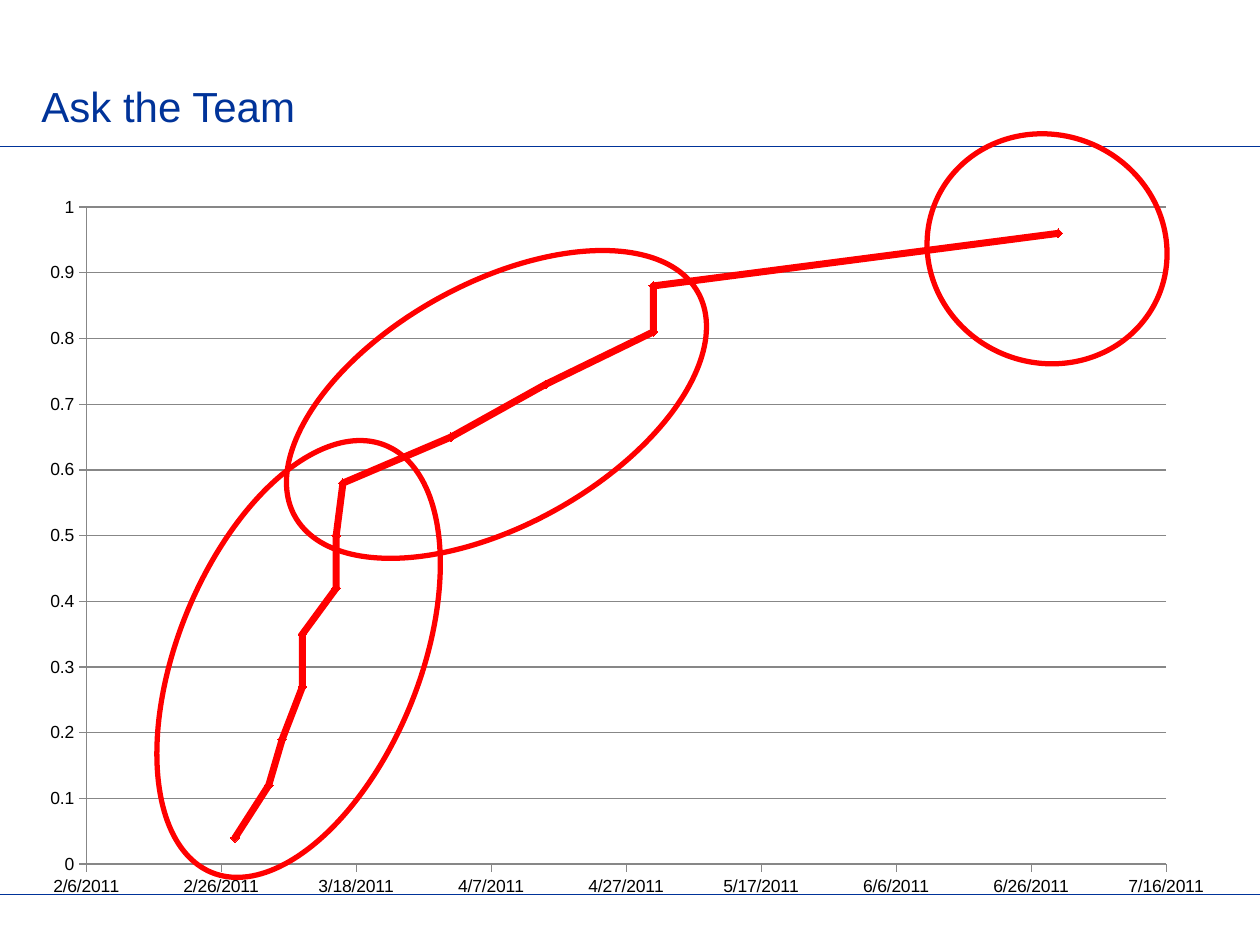
from dataclasses import dataclass

import pptx
import pptx.chart.data
import pptx.dml.color
import pptx.enum.chart
import pptx.enum.shapes
import pptx.enum.text
import pptx.oxml.ns
import pptx.oxml.xmlchemy
import pptx.util
from pptx.util import Inches

RGB = pptx.dml.color.RGBColor


@dataclass(frozen=True)
class Theme:
    font: str = "Arial"
    navy: RGB = RGB(0x00, 0x33, 0x99)
    red: RGB = RGB(0xFF, 0x00, 0x00)
    grey: RGB = RGB(0x87, 0x87, 0x87)
    black: RGB = RGB(0x00, 0x00, 0x00)
    title_size: pptx.util.Length = pptx.util.Pt(24)
    axis_size: pptx.util.Length = pptx.util.Pt(10)


THEME = Theme()

# Dates are spreadsheet day numbers; shares are cumulative.
START_DAY, END_DAY, DAY_STEP = 40580, 40740, 20
ANSWERS = [
    (40602, 0.04), (40607, 0.12), (40609, 0.19), (40612, 0.27),
    (40612, 0.35), (40617, 0.42), (40617, 0.5), (40618, 0.58),
    (40634, 0.65), (40648, 0.73), (40664, 0.81), (40664, 0.88),
    (40724, 0.96),
]
# left, top, width, height, rotation
CLUSTERS = [
    (1.41, 3.4, 1.92, 3.66, 22.1),
    (2.98, 1.38, 1.92, 3.66, 61),
    (7.35, 1.07, 1.92, 1.81, 22.1),
]


def style_line(line, color, points):
    line.color.rgb = color
    line.width = pptx.util.Pt(points)


def add_rule(slide, left, top, width):
    rule = slide.shapes.add_connector(
        pptx.enum.shapes.MSO_CONNECTOR.STRAIGHT, left, top, left + width, top)
    style_line(rule.line, THEME.navy, 0.5)
    properties = rule._element.spPr
    properties.append(pptx.oxml.xmlchemy.OxmlElement("a:effectLst"))


def add_title(slide, left, top, width, height, wording):
    frame = slide.shapes.add_textbox(left, top, width, height).text_frame
    frame.word_wrap = True
    frame.vertical_anchor = pptx.enum.text.MSO_ANCHOR.BOTTOM
    title = frame.paragraphs[0]
    title.text = wording
    title.font.name = THEME.font
    title.font.size = THEME.title_size
    title.font.color.rgb = THEME.navy


def set_plot_layout(chart, x, y, w, h):
    """Fix the inner plot area, in fractions of the chart."""
    plot_area = chart._chartSpace.chart.plotArea
    for old in plot_area.findall(pptx.oxml.ns.qn("c:layout")):
        plot_area.remove(old)
    layout = pptx.oxml.xmlchemy.OxmlElement("c:layout")
    manual = pptx.oxml.xmlchemy.OxmlElement("c:manualLayout")
    layout.append(manual)
    settings = [("layoutTarget", "inner"), ("xMode", "edge"), ("yMode", "edge"),
                ("x", x), ("y", y), ("w", w), ("h", h)]
    for tag, value in settings:
        setting = pptx.oxml.xmlchemy.OxmlElement(f"c:{tag}")
        setting.set("val", str(value))
        manual.append(setting)
    plot_area.insert(0, layout)


def style_axis(axis, low, high, step, number_format, gridlines):
    axis.minimum_scale, axis.maximum_scale, axis.major_unit = low, high, step
    axis.major_tick_mark = pptx.enum.chart.XL_TICK_MARK.OUTSIDE
    axis.minor_tick_mark = pptx.enum.chart.XL_TICK_MARK.NONE
    axis.tick_labels.number_format = number_format
    axis.tick_labels.number_format_is_linked = False
    style_line(axis.format.line, THEME.grey, 0.75)
    axis.has_major_gridlines = gridlines
    if gridlines:
        style_line(axis.major_gridlines.format.line, THEME.grey, 0.75)


def add_answer_chart(slide, left, top, width, height):
    data = pptx.chart.data.XyChartData()
    answers = data.add_series("Series 1")
    for day, share in ANSWERS:
        answers.add_data_point(day, share)
    chart = slide.shapes.add_chart(
        pptx.enum.chart.XL_CHART_TYPE.XY_SCATTER_LINES,
        left, top, width, height, data).chart
    chart.has_legend = False
    chart.has_title = False
    chart.font.name = THEME.font
    chart.font.size = THEME.axis_size
    chart.font.color.rgb = THEME.black
    chart.plots[0].vary_by_categories = False
    set_plot_layout(chart, 0.045, 0.027, 0.904, 0.915)
    style_axis(chart.category_axis, START_DAY, END_DAY, DAY_STEP, "m/d/yyyy", False)
    style_axis(chart.value_axis, 0, 1, 0.1, "General", True)

    curve = chart.plots[0].series[0]
    curve.smooth = False
    style_line(curve.format.line, THEME.red, 4)
    curve.marker.style = pptx.enum.chart.XL_MARKER_STYLE.DIAMOND
    curve.marker.size = 5
    curve.marker.format.fill.solid()
    curve.marker.format.fill.fore_color.rgb = THEME.red
    style_line(curve.marker.format.line, THEME.red, 0.75)


def add_cluster_ring(slide, left, top, width, height, rotation):
    ring = slide.shapes.add_shape(
        pptx.enum.shapes.MSO_SHAPE.OVAL, left, top, width, height)
    ring.rotation = rotation
    ring.shadow.inherit = False
    ring.fill.background()
    style_line(ring.line, THEME.red, 3)


def main():
    deck = pptx.Presentation()
    deck.slide_width, deck.slide_height = Inches(10), Inches(7.5)
    slide = deck.slides.add_slide(deck.slide_layouts[6])
    for top in (1.16, 7.1):
        add_rule(slide, 0, Inches(top), deck.slide_width)
    add_title(slide, Inches(0.23), Inches(0.15), Inches(8.28), Inches(0.94),
              "Ask the Team")
    add_answer_chart(slide, Inches(0.26), Inches(1.49), Inches(9.48), Inches(5.7))
    for *box, rotation in CLUSTERS:
        add_cluster_ring(slide, *map(Inches, box), rotation)
    deck.save("out.pptx")


if __name__ == "__main__":
    main()
